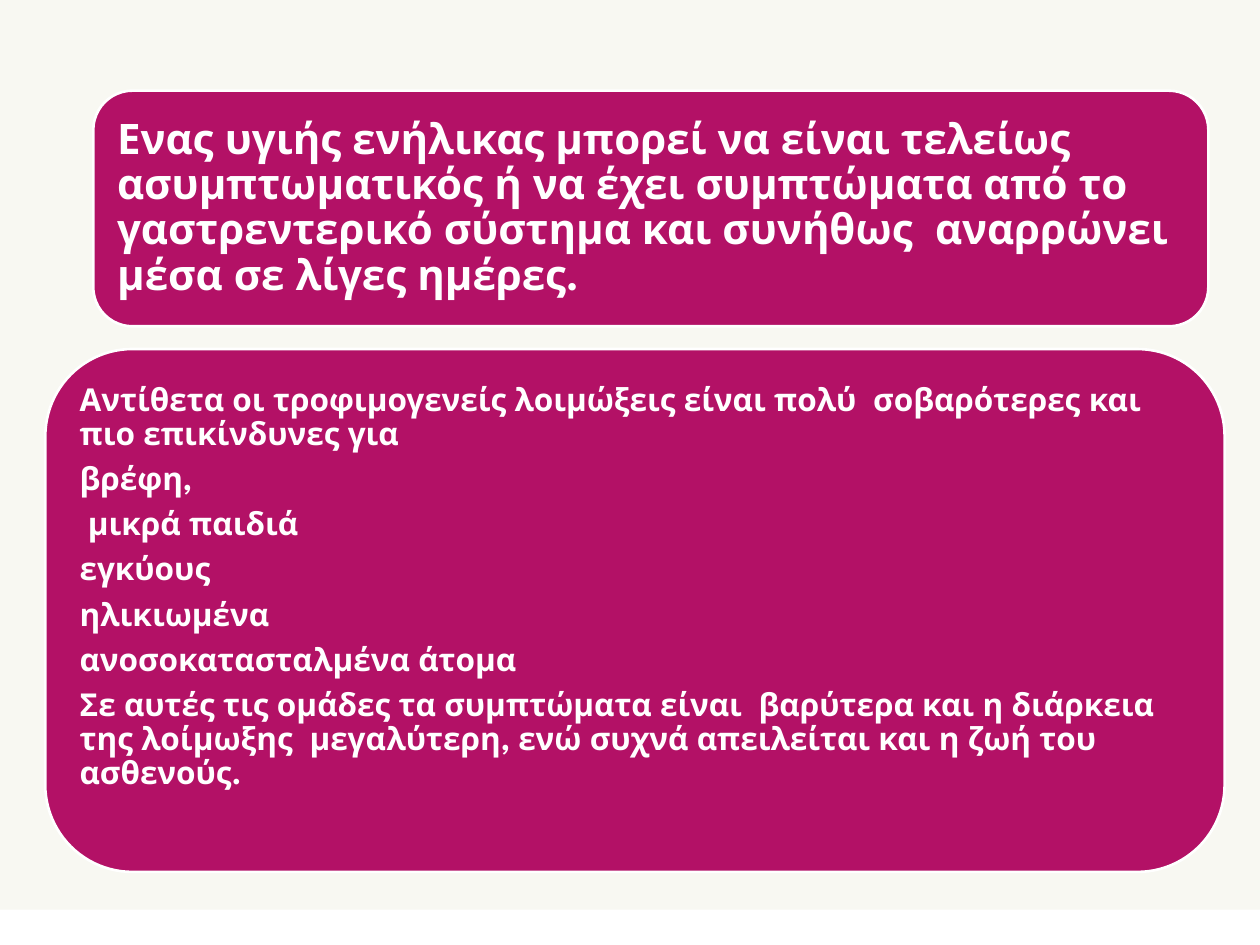
"""Build the slide on how foodborne infections affect healthy adults and vulnerable groups."""
import pptx
import pptx.dml.color
import pptx.enum.shapes
import pptx.enum.text
import pptx.util

Inches = pptx.util.Inches
Pt = pptx.util.Pt
MSO_SHAPE = pptx.enum.shapes.MSO_SHAPE

COLORS = {"backdrop": "F8F8F2", "panel": "B31166", "light": "FFFFFF"}

HEALTHY_ADULTS = [
    "Ενας υγιής ενήλικας μπορεί να είναι τελείως  ασυμπτωματικός ή να έχει "
    "συμπτώματα από το  γαστρεντερικό σύστημα και συνήθως  αναρρώνει μέσα σε "
    "λίγες ημέρες.",
]
VULNERABLE_GROUPS = [
    "Αντίθετα οι τροφιμογενείς λοιμώξεις είναι πολύ  σοβαρότερες και πιο "
    "επικίνδυνες για",
    "βρέφη,",
    " μικρά παιδιά",
    "εγκύους",
    "ηλικιωμένα",
    "ανοσοκατασταλμένα άτομα",
    "Σε αυτές τις ομάδες τα συμπτώματα είναι  βαρύτερα και η διάρκεια της "
    "λοίμωξης  μεγαλύτερη, ενώ συχνά απειλείται και η ζωή του  ασθενούς.",
]


class SlideBuilder:
    font_name = "League Spartan"
    line_spacing = 0.9
    space_after_ratio = 0.35

    def __init__(self, slide):
        self.slide = slide

    def color(self, name):
        return pptx.dml.color.RGBColor.from_string(COLORS[name])

    def block(self, preset, box, fill):
        block = self.slide.shapes.add_shape(preset, *map(Inches, box))
        block.shadow.inherit = False
        block.fill.solid()
        block.fill.fore_color.rgb = self.color(fill)
        block.line.fill.background()
        return block

    def backdrop(self, width, height):
        self.block(MSO_SHAPE.RECTANGLE, (0, 0, width, height), "backdrop")

    def panel(self, box, statements, size, inset, bottom_inset):
        panel = self.block(MSO_SHAPE.ROUNDED_RECTANGLE, box, "panel")
        panel.line.color.rgb = self.color("light")
        panel.line.width = Pt(1.5)
        frame = panel.text_frame
        frame.word_wrap = True
        frame.vertical_anchor = pptx.enum.text.MSO_ANCHOR.MIDDLE
        frame.margin_left = frame.margin_right = frame.margin_top = Inches(inset)
        frame.margin_bottom = Inches(bottom_inset)
        frame.text = "\n".join(statements)
        for paragraph in frame.paragraphs:
            paragraph.alignment = pptx.enum.text.PP_ALIGN.LEFT
            paragraph.line_spacing = self.line_spacing
            paragraph.space_after = Pt(size * self.space_after_ratio)
            paragraph.font.name = self.font_name
            paragraph.font.size = Pt(size)
            paragraph.font.bold = True
            paragraph.font.color.rgb = self.color("light")


def main():
    deck = pptx.Presentation()
    deck.slide_width, deck.slide_height = Inches(10), Inches(7.5)
    builder = SlideBuilder(deck.slides.add_slide(deck.slide_layouts[6]))
    builder.backdrop(10, 7.22)
    builder.panel((0.74, 0.72, 8.85, 1.87), HEALTHY_ADULTS, 24, 0.1, 0.1)
    builder.panel((0.36, 2.77, 9.36, 4.15), VULNERABLE_GROUPS, 18, 0.07, 0.43)
    deck.save("out.pptx")


if __name__ == "__main__":
    main()
